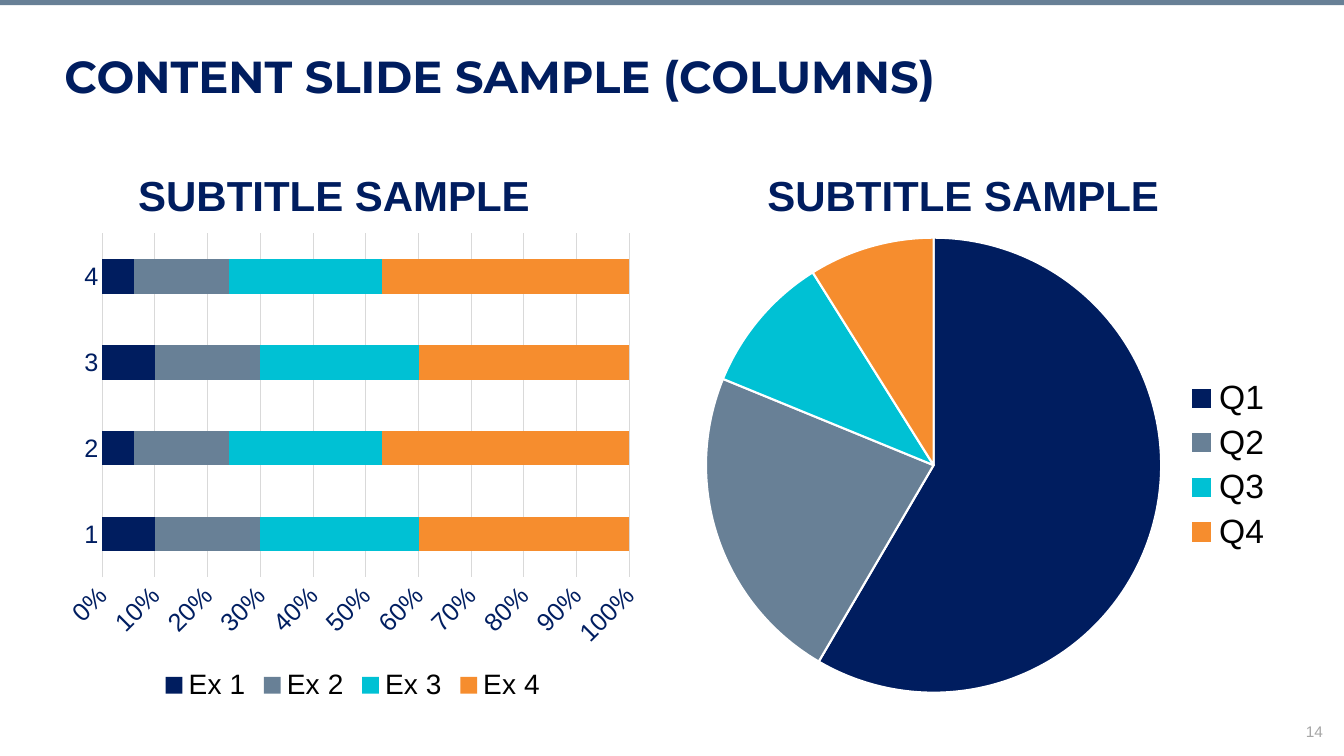
from pptx import Presentation
from pptx.chart.data import CategoryChartData
from pptx.dml.color import RGBColor
from pptx.enum.chart import XL_CHART_TYPE, XL_LEGEND_POSITION, XL_TICK_MARK
from pptx.enum.shapes import MSO_SHAPE
from pptx.enum.text import MSO_ANCHOR, PP_ALIGN
from pptx.util import Inches, Pt

NAVY = RGBColor(0x00, 0x1D, 0x5F)
INK = RGBColor(0x00, 0x1E, 0x61)
SLATE = RGBColor(0x68, 0x80, 0x96)
CYAN = RGBColor(0x00, 0xC1, 0xD4)
ORANGE = RGBColor(0xF6, 0x8D, 0x2E)
SILVER = RGBColor(0xD9, 0xD9, 0xD9)
GRAY = RGBColor(0xA6, 0xA6, 0xA6)
BLACK = RGBColor(0x00, 0x00, 0x00)
WHITE = RGBColor(0xFF, 0xFF, 0xFF)
COLORS = [NAVY, SLATE, CYAN, ORANGE]


class Canvas:
    face = "Arial"

    def __init__(self, slide):
        self.slide = slide

    def style(self, font, size, color, face=None, bold=False):
        font.name = face or self.face
        font.size = Pt(size)
        font.color.rgb = color
        font.bold = bold

    def band(self, box, color):
        shape = self.slide.shapes.add_shape(MSO_SHAPE.RECTANGLE, *map(Inches, box))
        shape.shadow.inherit = False
        shape.fill.solid()
        shape.fill.fore_color.rgb = color
        shape.line.fill.background()

    def text(self, box, words, size, color, align=PP_ALIGN.LEFT,
             anchor=MSO_ANCHOR.TOP, face=None, bold=False, pitch=1.0):
        frame = self.slide.shapes.add_textbox(*map(Inches, box)).text_frame
        frame.word_wrap = True
        frame.vertical_anchor = anchor
        para = frame.paragraphs[0]
        para.alignment = align
        para.line_spacing = pitch
        run = para.add_run()
        run.text = words
        self.style(run.font, size, color, face, bold)

    def chart(self, kind, box, names, series, place, size):
        data = CategoryChartData()
        data.categories = names
        for name, values in series:
            data.add_series(name, values)
        chart = self.slide.shapes.add_chart(kind, *map(Inches, box), data).chart
        self.style(chart.font, 10, BLACK)
        chart.has_title = False
        chart.has_legend = True
        chart.legend.position = place
        chart.legend.include_in_layout = False
        self.style(chart.legend.font, size, BLACK)
        return chart

    def pie(self, box, names, series):
        chart = self.chart(XL_CHART_TYPE.PIE, box, names, [series],
                           XL_LEGEND_POSITION.RIGHT, 24)
        plot = chart.plots[0]
        plot.vary_by_categories = True
        for index, color in enumerate(COLORS):
            form = plot.series[0].points[index].format
            form.fill.solid()
            form.fill.fore_color.rgb = color
            form.line.color.rgb = WHITE
            form.line.width = Pt(1.5)

    def bars(self, box, names, series):
        chart = self.chart(XL_CHART_TYPE.BAR_STACKED_100, box, names, series,
                           XL_LEGEND_POSITION.BOTTOM, 20)
        plot = chart.plots[0]
        plot.vary_by_categories = False
        plot.gap_width = 150
        plot.overlap = 100
        for item, color in zip(plot.series, COLORS):
            item.format.fill.solid()
            item.format.fill.fore_color.rgb = color
        rows, scale = chart.category_axis, chart.value_axis
        for axis in (rows, scale):
            axis.major_tick_mark = XL_TICK_MARK.NONE
            axis.minor_tick_mark = XL_TICK_MARK.NONE
            self.style(axis.tick_labels.font, 18, INK)
        scale.major_unit = 0.1
        scale.has_major_gridlines = True
        for line in (rows.format.line, scale.major_gridlines.format.line):
            line.color.rgb = SILVER
            line.width = Pt(0.75)
        scale.format.line.fill.background()
        scale.tick_labels.number_format = "0%"
        scale.tick_labels.number_format_is_linked = False
        for body in chart._chartSpace.xpath(".//c:valAx/c:txPr/a:bodyPr"):
            body.set("rot", "-2700000")
            body.set("vert", "horz")


def main():
    deck = Presentation()
    deck.slide_width = Inches(13.33)
    deck.slide_height = Inches(7.5)
    page = Canvas(deck.slides.add_slide(deck.slide_layouts[6]))

    page.band((0, 0, 13.33, 0.05), SLATE)
    page.text((9.2, 7.11, 4.02, 0.29), "14", 11, GRAY, PP_ALIGN.RIGHT)
    page.pie((6.81, 2.22, 5.92, 4.79), ["Q1", "Q2", "Q3", "Q4"],
             ("Series 1", [59, 23, 10, 9]))
    page.bars((0.54, 2.22, 5.92, 4.79), ["1", "2", "3", "4"], [
        ("Ex 1", [10, 6, 10, 6]),
        ("Ex 2", [20, 18, 20, 18]),
        ("Ex 3", [30, 29, 30, 29]),
        ("Ex 4", [40, 47, 40, 47]),
    ])
    page.text((0.54, 0.49, 12.24, 0.77), "CONTENT SLIDE SAMPLE (COLUMNS)",
              32, NAVY, face="Montserrat", bold=True, pitch=0.9)
    for left in (0.6, 6.84):
        page.text((left, 1.58, 5.43, 0.77), "SUBTITLE SAMPLE", 30, NAVY,
                  PP_ALIGN.CENTER, MSO_ANCHOR.MIDDLE, bold=True, pitch=0.9)
    deck.save("out.pptx")


if __name__ == "__main__":
    main()
